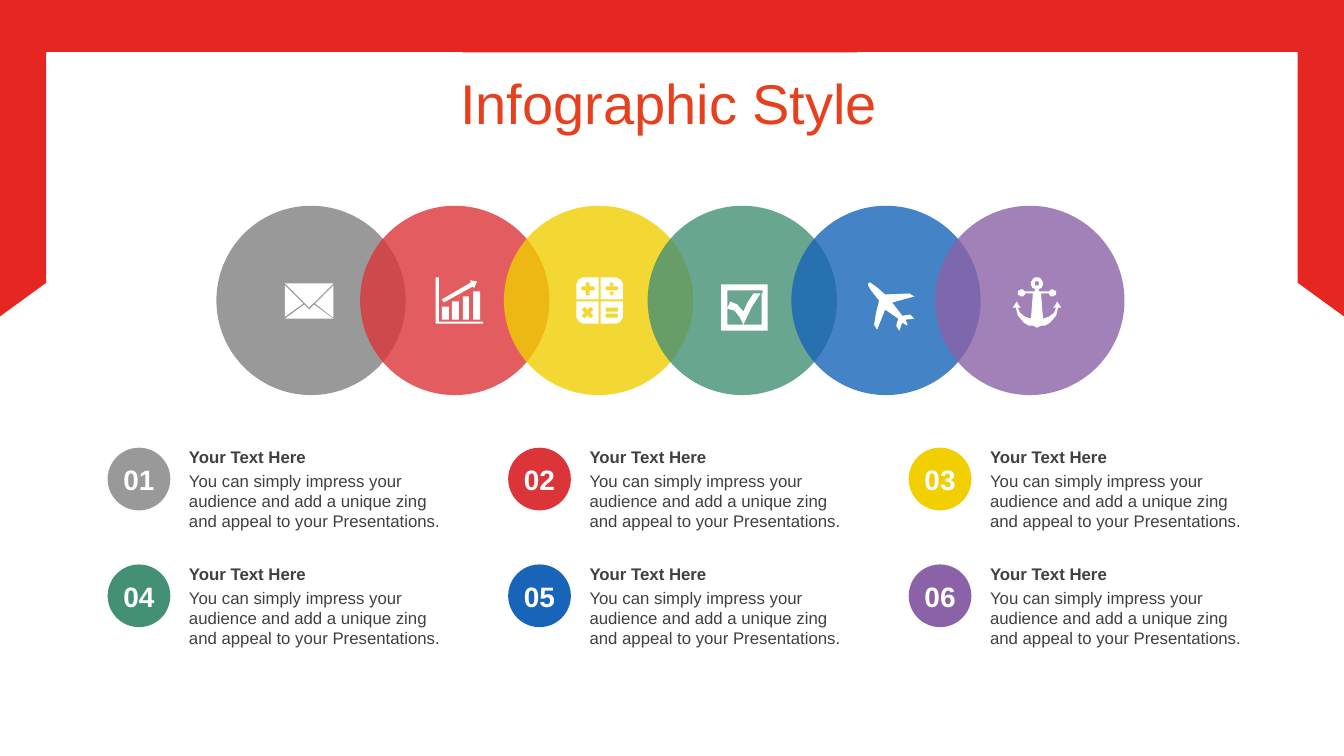
from math import cos, radians, sin

from lxml.etree import SubElement
from pptx import Presentation
from pptx.dml.color import RGBColor
from pptx.enum.shapes import MSO_SHAPE
from pptx.enum.text import MSO_ANCHOR, PP_ALIGN
from pptx.oxml.ns import qn
from pptx.util import Pt

FRAME_RED = RGBColor(0xE5, 0x26, 0x21)
TITLE_RED = RGBColor(0xE7, 0x40, 0x1E)
WHITE = RGBColor(0xFF, 0xFF, 0xFF)
INK = RGBColor(0x40, 0x40, 0x40)
GRAY = RGBColor(0x80, 0x80, 0x80)
RED = RGBColor(0xDC, 0x35, 0x39)
YELLOW = RGBColor(0xF1, 0xCF, 0x01)
GREEN = RGBColor(0x44, 0x90, 0x74)
BLUE = RGBColor(0x17, 0x64, 0xB9)
PURPLE = RGBColor(0x8B, 0x62, 0xA8)
COLORS = [GRAY, RED, YELLOW, GREEN, BLUE, PURPLE]
FONT = "Arial"
HEADING = "Your Text Here"
BODY = ("You can simply impress your audience and add a unique zing "
        "and appeal to your Presentations.")
ICON_UNIT = 0.72


def arc(x, y, radius, start, end):
    """Return points along an arc, with angles in degrees clockwise from the right."""
    angles = [radians(start + (end - start) * step / 16) for step in range(17)]
    return [(round(x + radius * cos(a), 2), round(y + radius * sin(a), 2)) for a in angles]


def block(x, y, width, height):
    """Return the corners of a rectangle."""
    return [(x, y), (x + width, y), (x + width, y + height), (x, y + height)]


def mirror(half, center):
    """Return a symmetric outline from its right half, given relative to the axis."""
    return ([(center + x, y) for x, y in half]
            + [(center - x, y) for x, y in reversed(half)])


ENVELOPE = [
    [(19, 21), (24, 26), (29, 21), (48, 35), (0, 35)],
    [(48, 2), (48, 34), (30, 20)],
    [(0, 2), (18, 20), (0, 33)],
    [(0, 0), (48, 0), (24, 24)],
]
BAR_CHART = [
    *[block(6 + 10.3 * bar, 29 - 5 * bar, 6.7, 13 + 5 * bar) for bar in range(4)],
    [(34, 3), (41, 4), (38, 11), (37, 9), (8, 25), (6, 22), (35, 5)],
    [(0, 0), (3, 0), (3, 44), (47, 44), (47, 46), (0, 46)],
]
CALCULATOR = [
    [(0, 22.5), *arc(8, 8, 8, 180, 270), (22.5, 0), (22.5, 22.5)],
    [(23.5, 0), *arc(38, 8, 8, 270, 360), (46, 22.5), (23.5, 22.5)],
    [(46, 23.5), *arc(38, 38, 8, 0, 90), (23.5, 46), (23.5, 23.5)],
    [(22.5, 46), *arc(8, 38, 8, 90, 180), (0, 23.5), (22.5, 23.5)],
    [(9, 5), (9, 9), (5, 9), (5, 13), (9, 13), (9, 18),
     (13, 18), (13, 13), (18, 13), (18, 9), (13, 9), (13, 5)],
    [(8, 29), (5, 32), (8, 35), (5, 38), (8, 41), (11, 38),
     (14, 41), (17, 38), (14, 35), (17, 32), (14, 29), (11, 32)],
    *[block(29, y, 12, 4) for y in (9, 30, 36)],
    *[arc(35, y, 2, 0, 360) for y in (7, 16)],
]
CHECK_BOX = [
    block(0, 0, 46, 46),
    [(6, 6), (6, 40), (22, 40), (18, 32), (13, 26), (6, 24), (9, 17), (16, 20),
     (22, 27), (26, 18), (32, 9), (39, 9), (30, 23), (22, 40), (40, 40),
     (40, 9), (41, 9), (41, 6)],
]
PLANE = [
    [(46, 36), (37, 37), (39, 41), (39, 43), (34, 40), (31, 48), (28, 43), (30, 36),
     (17, 27), (9, 47), (6, 42), (8, 30), (11, 18), (3, 8), (0, 3), (0, 1), (2, 0),
     (9, 5), (17, 12), (41, 11), (46, 14), (24, 20), (34, 33), (42, 32)],
]
ANCHOR = [
    mirror([*arc(0, 6, 6, -90, 60), (2.5, 12), (2.5, 14), *arc(15.5, 15.5, 3.5, -150, 150),
            (12, 16), (3.5, 16), (6, 41), (12, 39), (17, 35), (19, 30), (16, 30),
            (18.5, 28), (20, 24), (21.5, 27), (24, 30), (21, 30), (19, 38),
            (13, 45), (8, 48), (4, 48.5), (0, 50)], 24),
    arc(24, 6, 2.5, 0, 360),
]
ICONS = [(ENVELOPE, 68, 77), (BAR_CHART, 75, 71), (CALCULATOR, 72, 71),
         (CHECK_BOX, 73, 78), (PLANE, 76, 76), (ANCHOR, 77, 71)]


def paint(shape, color, opacity=100):
    """Give a shape a plain fill, without outline or shadow."""
    shape.shadow.inherit = False
    shape.line.fill.background()
    shape.fill.solid()
    shape.fill.fore_color.rgb = color
    if opacity < 100:
        color_node = shape.fill._xPr.find(qn("a:solidFill"))[0]
        SubElement(color_node, qn("a:alpha"), val=str(opacity * 1000))


def add_outline(page, left, top, contours, color, unit=1):
    """Draw closed contours as one filled shape."""
    start = contours[0][0]
    builder = page.shapes.build_freeform(start[0], start[1], scale=Pt(unit))
    for contour in contours:
        builder.move_to(*contour[0])
        builder.add_line_segments(contour[1:], close=True)
    paint(builder.convert_to_shape(Pt(left), Pt(top)), color)


def add_disc(page, left, top, size, color, opacity):
    """Draw a filled circle."""
    disc = page.shapes.add_shape(MSO_SHAPE.OVAL, Pt(left), Pt(top), Pt(size), Pt(size))
    paint(disc, color, opacity)


def add_text(page, left, top, width, height, text, size, color, bold=False):
    """Add a wrapping text box and return its frame."""
    frame = page.shapes.add_textbox(Pt(left), Pt(top), Pt(width), Pt(height)).text_frame
    frame.word_wrap = True
    para = frame.paragraphs[0]
    para.text = text
    para.font.name = FONT
    para.font.size = Pt(size)
    para.font.bold = bold
    para.font.color.rgb = color
    return frame


def add_frame(page, width, height):
    """Draw the red border around the top of the page."""
    half, band, side = 471, 37, 33
    wing = [(0, 0), (half, 0), (half, band), (side, band), (side, height - 24.5), (0, height)]
    add_outline(page, 0, 0, [[(width - x, y) for x, y in wing]], FRAME_RED)
    add_outline(page, 0, 0, [wing], FRAME_RED)
    joint = page.shapes.add_shape(MSO_SHAPE.RECTANGLE, Pt(330.5), 0, Pt(281.5), Pt(37.4))
    paint(joint, FRAME_RED)


def add_title(page, left, top, width, height):
    """Add the centred page title."""
    frame = add_text(page, left, top, width, height, "Infographic Style", 40, TITLE_RED)
    frame.vertical_anchor = MSO_ANCHOR.MIDDLE
    para = frame.paragraphs[0]
    para.alignment = PP_ALIGN.CENTER
    para.line_spacing = 0.9
    para.space_before = Pt(10)


def add_circle_chain(page, left, top, width, size):
    """Draw the overlapping circles, then their icons."""
    pitch = (width - size) / (len(COLORS) - 1)
    for index, color in enumerate(COLORS):
        add_disc(page, left + index * pitch, top, size, color, 80)
    for index, (contours, x, y) in enumerate(ICONS):
        add_outline(page, left + index * pitch + x * ICON_UNIT, top + y * ICON_UNIT,
                    contours, WHITE, ICON_UNIT)


def add_item(page, left, top, number, color):
    """Add a numbered badge with its heading and description."""
    size = 44.8
    add_text(page, left + 51, top - 4.4, 201, 21.6, HEADING, 12, INK, bold=True)
    add_text(page, left + 51, top + 12.8, 201, 51, BODY, 12, INK)
    add_disc(page, left, top, size, color, 80 if color == GRAY else 100)
    label = add_text(page, left, top + 10.8, size, 24.5, f"{number:02}", 20, WHITE, bold=True)
    label.margin_left = label.margin_right = label.margin_top = label.margin_bottom = 0
    label.paragraphs[0].alignment = PP_ALIGN.CENTER


def add_item_grid(page, left, top, column_pitch, row_pitch):
    """Lay the six items out in three columns."""
    for index, color in enumerate(COLORS):
        row, column = divmod(index, 3)
        add_item(page, left + column * column_pitch, top + row * row_pitch, index + 1, color)


def main():
    """Build the slide and save it."""
    deck = Presentation()
    deck.slide_width, deck.slide_height = Pt(960), Pt(540)
    page = deck.slides.add_slide(deck.slide_layouts[6])
    add_frame(page, 960, 226)
    add_title(page, 62.6, 47.5, 830, 57)
    add_circle_chain(page, 154.6, 147, 648.6, 135.2)
    add_item_grid(page, 76.9, 319.8, 286.1, 83.4)
    deck.save("out.pptx")


if __name__ == "__main__":
    main()
